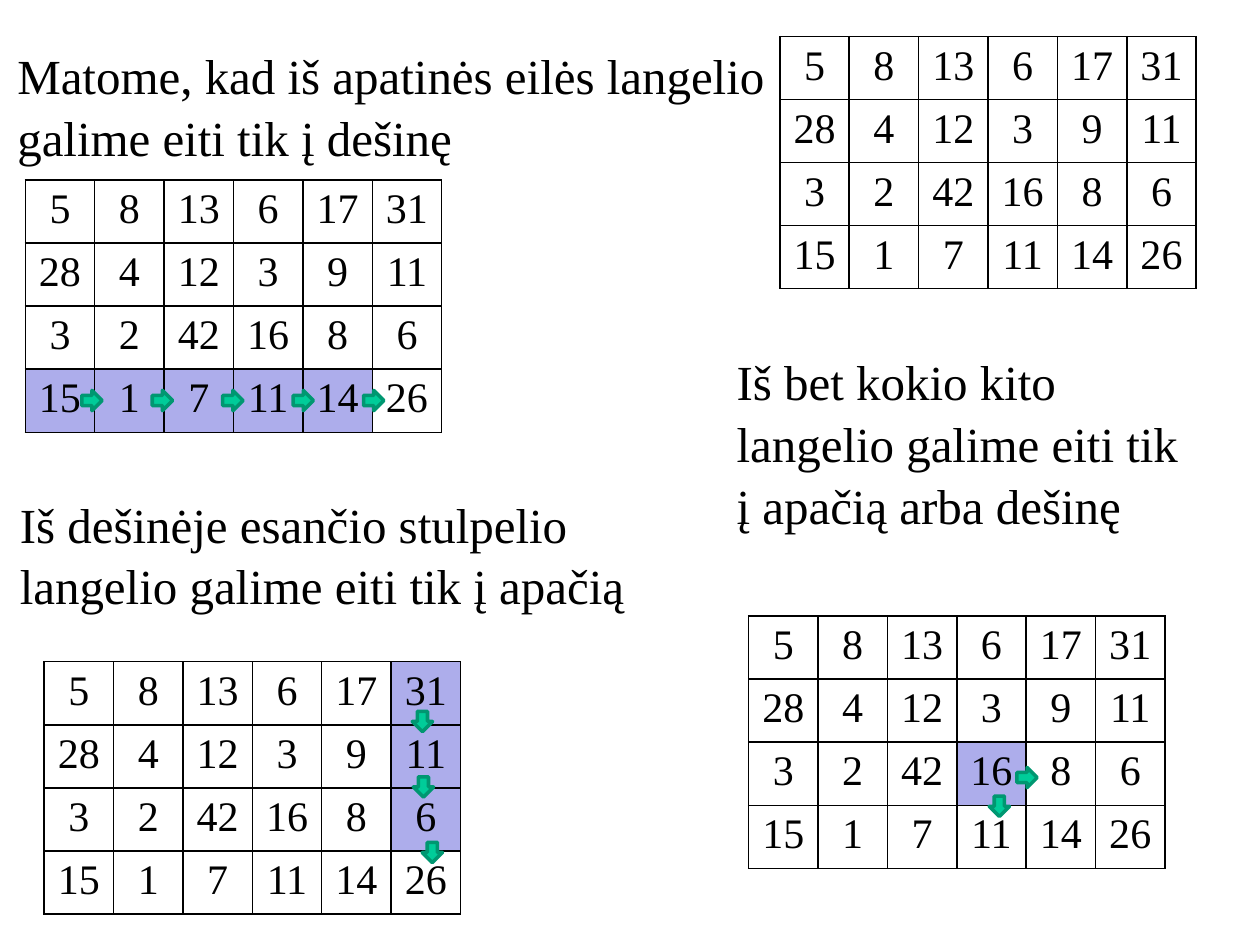
import pptx
import pptx.dml.color
import pptx.enum.shapes
import pptx.enum.text
import pptx.oxml
import pptx.oxml.ns
import pptx.util
from pptx.util import Cm

FONT = "Times New Roman"
BLACK, WHITE, LILAC = "000000", "FFFFFF", "ADADEB"
GREEN, DARK_GREEN = "00CC99", "009771"
NUMBERS = [
    [5, 8, 13, 6, 17, 31],
    [28, 4, 12, 3, 9, 11],
    [3, 2, 42, 16, 8, 6],
    [15, 1, 7, 11, 14, 26],
]
COLUMN_WIDTH, ROW_HEIGHT, ARROW_SIZE = 1.4, 1.27, 0.41
RIGHT, DOWN = 0, 90


def color(hex_code):
    """Turn a hex string into a colour."""
    return pptx.dml.color.RGBColor.from_string(hex_code)


def format_paragraph(paragraph, size):
    """Give a paragraph the slide's font at one size."""
    paragraph.font.name = FONT
    paragraph.font.size = pptx.util.Pt(size)
    paragraph.font.color.rgb = color(BLACK)


def add_statement(slide, box, wording):
    """Write one statement about the allowed moves."""
    statement = slide.shapes.add_textbox(*(Cm(length) for length in box))
    frame = statement.text_frame
    frame.word_wrap = True
    frame.auto_size = pptx.enum.text.MSO_AUTO_SIZE.SHAPE_TO_FIT_TEXT
    frame.text = wording
    frame.paragraphs[0].line_spacing = 1.05
    format_paragraph(frame.paragraphs[0], 28)


def outline_cell(cell):
    """Draw a thin black border on all sides of a cell."""
    properties = cell._tc.get_or_add_tcPr()
    for side in ("lnL", "lnR", "lnT", "lnB"):
        properties.append(pptx.oxml.parse_xml(
            f'<a:{side} {pptx.oxml.ns.nsdecls("a")} w="12700"><a:solidFill>'
            f'<a:srgbClr val="{BLACK}"/></a:solidFill></a:{side}>'
        ))


def add_arrow(slide, left, top, turn):
    """Draw one small move arrow."""
    arrow = slide.shapes.add_shape(
        pptx.enum.shapes.MSO_SHAPE.RIGHT_ARROW,
        Cm(left), Cm(top), Cm(ARROW_SIZE), Cm(ARROW_SIZE),
    )
    arrow.rotation = turn
    arrow.shadow.inherit = False
    arrow.fill.solid()
    arrow.fill.fore_color.rgb = color(GREEN)
    arrow.line.color.rgb = color(DARK_GREEN)
    arrow.line.width = pptx.util.Pt(2)


def add_number_grid(slide, left, top, marked=(), moves=()):
    """Draw the number grid with its marked cells and move arrows."""
    rows, columns = len(NUMBERS), len(NUMBERS[0])
    grid = slide.shapes.add_table(
        rows, columns, Cm(left), Cm(top),
        Cm(columns * COLUMN_WIDTH), Cm(rows * ROW_HEIGHT),
    ).table
    grid.first_row = grid.horz_banding = False
    for column in grid.columns:
        column.width = Cm(COLUMN_WIDTH)
    for r, numbers in enumerate(NUMBERS):
        grid.rows[r].height = Cm(ROW_HEIGHT)
        for c, number in enumerate(numbers):
            cell = grid.cell(r, c)
            cell.text = str(number)
            paragraph = cell.text_frame.paragraphs[0]
            paragraph.alignment = pptx.enum.text.PP_ALIGN.CENTER
            format_paragraph(paragraph, 24)
            outline_cell(cell)
            cell.fill.solid()
            cell.fill.fore_color.rgb = color(LILAC if (r, c) in marked else WHITE)
    for x, y, turn in moves:
        add_arrow(slide, left + x, top + y, turn)


def main():
    """Build the slide and save it."""
    presentation = pptx.Presentation()
    presentation.slide_width, presentation.slide_height = Cm(25.4), Cm(19.05)
    slide = presentation.slides.add_slide(presentation.slide_layouts[6])

    add_number_grid(slide, 15.72, 0.74)

    add_statement(slide, (0.1, 0.74, 15.65, 2.64),
                  "Matome, kad iš apatinės eilės langelio galime eiti tik į dešinę")
    add_number_grid(slide, 0.51, 3.63,
                    marked=[(3, c) for c in range(5)],
                    moves=[(1.14 + 1.42 * step, 4.24, RIGHT) for step in range(5)])

    add_statement(slide, (0.15, 9.78, 13, 2.64),
                  "Iš dešinėje esančio stulpelio langelio galime eiti tik į apačią")
    add_number_grid(slide, 0.89, 13.34,
                    marked=[(r, 5) for r in range(3)],
                    moves=[(x, 1 + 1.32 * step, DOWN)
                           for step, x in enumerate((7.42, 7.44, 7.62))])

    add_statement(slide, (14.6, 6.91, 9.88, 3.84),
                  "Iš bet kokio kito langelio galime eiti tik į apačią arba dešinę")
    add_number_grid(slide, 15.09, 12.42,
                    marked=[(2, 3)],
                    moves=[(5.41, 3.05, RIGHT), (4.85, 3.63, DOWN)])

    presentation.save("out.pptx")


if __name__ == "__main__":
    main()
